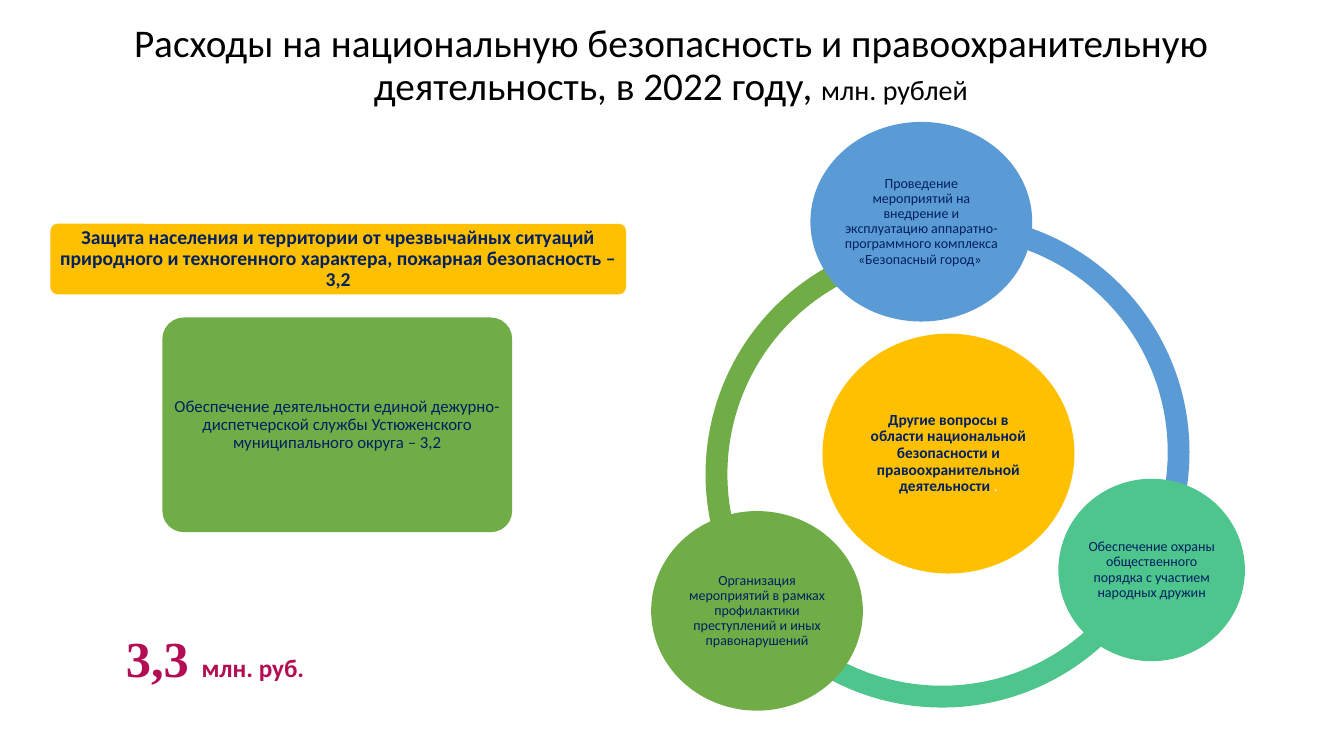
"""Build the slide on spending for national security and law enforcement in 2022."""
from pptx import Presentation
from pptx.dml.color import RGBColor
from pptx.enum.shapes import MSO_SHAPE as Shape
from pptx.enum.text import MSO_ANCHOR as Anchor, MSO_AUTO_SIZE as AutoSize, PP_ALIGN as Align
from pptx.util import Inches, Pt

GOLD, GREEN, MINT, BLUE = "FFC000", "70AD47", "4DC58D", "5B9BD5"
NAVY, BLACK, WHITE, CRIMSON = "002060", "000000", "FFFFFF", "B30D54"

deck = Presentation()
deck.slide_width, deck.slide_height = Inches(13.33), Inches(7.5)
page = deck.slides.add_slide(deck.slide_layouts[6])


def place(left, top, width, height):
    """Turn percentages of the slide into lengths."""
    across, down = deck.slide_width / 100, deck.slide_height / 100
    return int(left * across), int(top * down), int(width * across), int(height * down)


def paint(target, color):
    """Give a font or a fill one solid colour."""
    if hasattr(target, "solid"):
        target.solid()
        target.fore_color.rgb = RGBColor.from_string(color)
    else:
        target.color.rgb = RGBColor.from_string(color)


title = page.shapes.add_textbox(*place(0.83, 2.53, 98.18, 10.53))
title.text_frame.word_wrap = True
para = title.text_frame.paragraphs[0]
para.alignment, para.line_spacing, para.space_before = Align.CENTER, 0.9, Pt(10)
para.font.name = "Calibri"
paint(para.font, BLACK)
for words, size in [
    ("Расходы на национальную безопасность и правоохранительную деятельность, в 2022 году, ", 28),
    ("млн. рублей", 20),
]:
    span = para.add_run()
    span.text, span.font.size = words, Pt(size)

ring_arcs = [
    (52.5, 31.33, GREEN, 82.513, 160.944),
    (52.43, 30.8, MINT, 15.232, 85.724),
    (53.18, 28.4, BLUE, 157.411, 18.354),
]
for left, top, color, start, end in ring_arcs:
    arc = page.shapes.add_shape(Shape.BLOCK_ARC, *place(left, top, 35.33, 62.8))
    for index, value in enumerate((start, end, 0.046)):
        arc.adjustments[index] = value
    arc.shadow.inherit = False
    paint(arc.fill, color)
    arc.line.fill.background()

labelled_shapes = [
    (Shape.ROUNDED_RECTANGLE, (3.75, 29.6, 42.83, 9.33), GOLD, 14, True, 4,
     "Защита населения и территории от чрезвычайных ситуаций природного и техногенного "
     "характера, пожарная безопасность – 3,2", ""),
    (Shape.ROUNDED_RECTANGLE, (12.08, 42, 26.03, 28.4), GREEN, 12, False, 4,
     "Обеспечение деятельности единой дежурно-диспетчерской службы Устюженского "
     "муниципального округа – 3,2", ""),
    (Shape.OVAL, (61.2, 44.13, 18.75, 31.73), GOLD, 11, True, 1,
     "Другие вопросы в области национальной безопасности и правоохранительной деятельности ", "."),
    (Shape.OVAL, (60.3, 16.13, 16.5, 26.4), BLUE, 10, False, 1,
     "Проведение мероприятий на внедрение и эксплуатацию аппаратно-программного комплекса "
     "«Безопасный город» ", ""),
    (Shape.OVAL, (78.75, 63.33, 13.88, 24.13), MINT, 10, False, 1,
     "Обеспечение охраны общественного порядка с участием народных дружин", ""),
    (Shape.OVAL, (48.45, 67.6, 15.75, 26.4), GREEN, 10, False, 1,
     "Организация мероприятий в рамках профилактики преступлений и иных правонарушений", ""),
]
for kind, area, color, size, bold, inset, label, ending in labelled_shapes:
    box = page.shapes.add_shape(kind, *place(*area))
    if kind == Shape.ROUNDED_RECTANGLE:
        box.adjustments[0] = 0.1
    box.shadow.inherit = False
    paint(box.fill, color)
    box.line.fill.background()
    frame = box.text_frame
    frame.word_wrap, frame.vertical_anchor = True, Anchor.MIDDLE
    frame.margin_left = frame.margin_right = frame.margin_top = frame.margin_bottom = Pt(inset)
    para = frame.paragraphs[0]
    para.alignment, para.line_spacing = Align.CENTER, 0.9
    para.font.name, para.font.size = "Calibri", Pt(size)
    para.add_run().text = label
    para.runs[0].font.bold = bold
    paint(para.runs[0].font, NAVY)
    if ending:
        span = para.add_run()
        span.text = ending
        paint(span.font, WHITE)

total = page.shapes.add_textbox(*place(8.63, 82.27, 14.93, 9.47))
total.text_frame.word_wrap = False
total.text_frame.auto_size = AutoSize.SHAPE_TO_FIT_TEXT
para = total.text_frame.paragraphs[0]
para.font.bold = True
paint(para.font, CRIMSON)
for words, face, size in [("3,3 ", "Times New Roman", 36), ("млн. руб.", "Calibri", 18)]:
    span = para.add_run()
    span.text, span.font.name, span.font.size = words, face, Pt(size)

deck.save("out.pptx")
